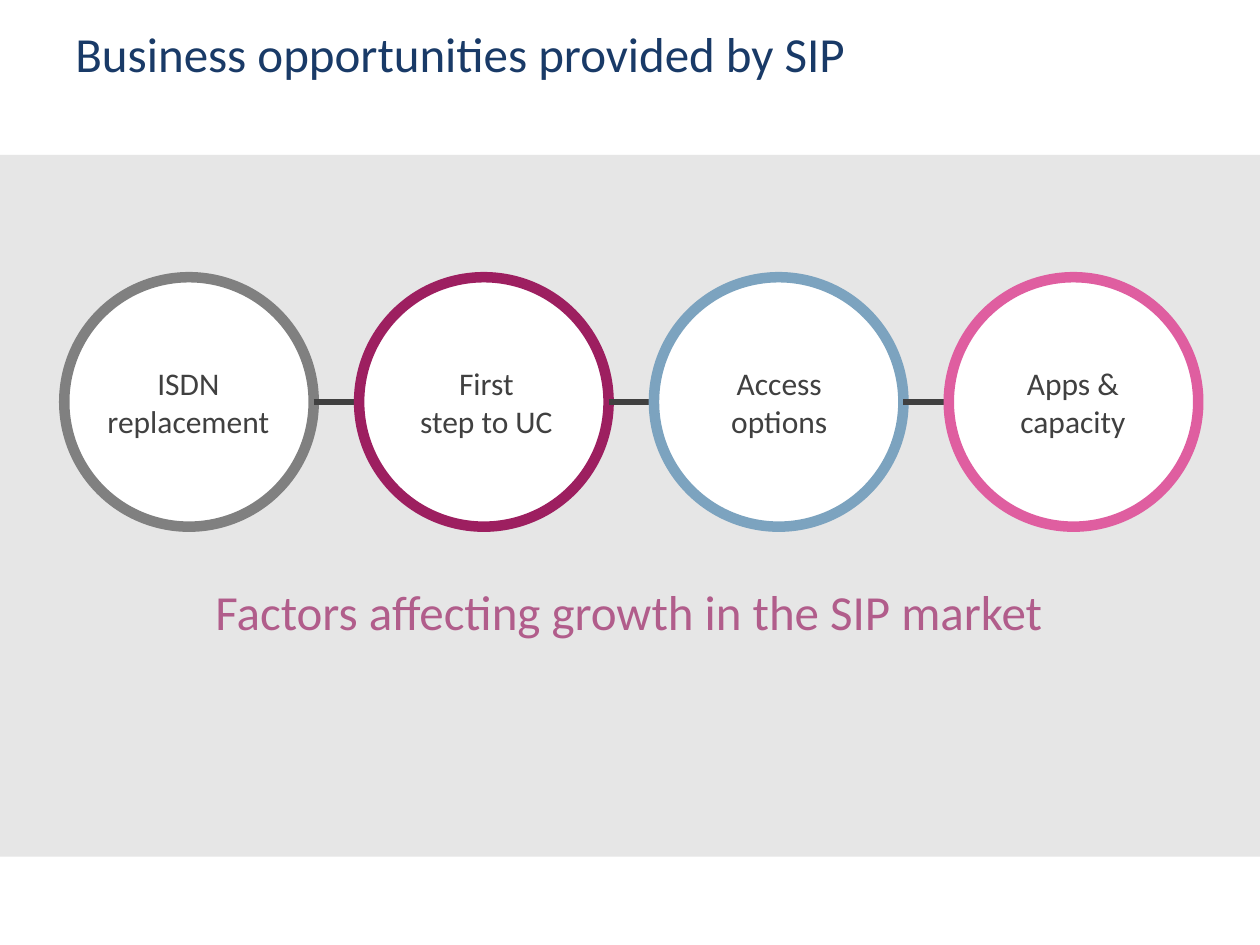
from dataclasses import dataclass

from lxml.etree import SubElement
from pptx import Presentation
from pptx.dml.color import RGBColor
from pptx.enum.shapes import MSO_CONNECTOR, MSO_SHAPE
from pptx.enum.text import MSO_ANCHOR, MSO_AUTO_SIZE, PP_ALIGN
from pptx.oxml.ns import qn
from pptx.shapes.autoshape import Shape
from pptx.slide import Slide
from pptx.util import Inches, Pt

FONT = "Calibri"
DARK = "404040"
DIAMETER = 1.98
GAP = 0.36
FIRST_LEFT = 0.51
CIRCLE_TOP = 2.2
MIDDLE = CIRCLE_TOP + DIAMETER / 2
LABEL_TOP = 2.84
LABEL_HEIGHT = 0.71


@dataclass
class Factor:
    text: str
    ring: str
    label_left: float
    label_width: float


FACTORS = [
    Factor("ISDN\nreplacement", "808080", 0.74, 1.51),
    Factor("First\nstep to UC", "9D1F60", 3.22, 1.28),
    Factor("Access\noptions", "7CA3BF", 5.7, 0.97),
    Factor("Apps &\ncapacity", "DF5EA0", 7.99, 1.05),
]


def colour(value: str) -> RGBColor:
    return RGBColor.from_string(value)


def add_filled_shape(page: Slide, kind: MSO_SHAPE, left: float, top: float,
                     width: float, height: float, fill: str) -> Shape:
    shape = page.shapes.add_shape(kind, Inches(left), Inches(top), Inches(width), Inches(height))
    shape.shadow.inherit = False
    shape.fill.solid()
    shape.fill.fore_color.rgb = colour(fill)
    shape.line.fill.background()
    return shape


def add_text(page: Slide, text: str, left: float, top: float, width: float, height: float,
             size: int, text_colour: str, align: PP_ALIGN = PP_ALIGN.LEFT) -> Shape:
    box = page.shapes.add_textbox(Inches(left), Inches(top), Inches(width), Inches(height))
    frame = box.text_frame
    frame.word_wrap = True
    frame.vertical_anchor = MSO_ANCHOR.TOP
    para = frame.paragraphs[0]
    para.text = text
    para.alignment = align
    for span in para.runs:
        span.font.name = FONT
        span.font.size = Pt(size)
        span.font.color.rgb = colour(text_colour)
    return box


def add_link(page: Slide, start: float, end: float) -> None:
    link = page.shapes.add_connector(
        MSO_CONNECTOR.STRAIGHT, Inches(start), Inches(MIDDLE), Inches(end), Inches(MIDDLE))
    link.line.color.rgb = colour(DARK)
    link.line.width = Pt(3)
    SubElement(link._element.spPr, qn("a:effectLst"))


def add_factor(page: Slide, factor: Factor, left: float) -> None:
    circle = add_filled_shape(page, MSO_SHAPE.OVAL, left, CIRCLE_TOP, DIAMETER, DIAMETER, "FFFFFF")
    circle.line.color.rgb = colour(factor.ring)
    circle.line.width = Pt(6)
    label = add_text(page, factor.text, factor.label_left, LABEL_TOP, factor.label_width,
                     LABEL_HEIGHT, 18, DARK, PP_ALIGN.CENTER)
    label.text_frame.word_wrap = False
    label.text_frame.auto_size = MSO_AUTO_SIZE.SHAPE_TO_FIT_TEXT


def main() -> None:
    deck = Presentation()
    deck.slide_width, deck.slide_height = Inches(10), Inches(7.5)
    page = deck.slides.add_slide(deck.slide_layouts[6])

    add_filled_shape(page, MSO_SHAPE.RECTANGLE, 0, 1.23, 10, 5.57, "E6E6E6")
    add_text(page, "Business opportunities provided by SIP", 0.5, 0.14, 9, 0.95, 28, "193A67")
    caption = add_text(page, "Factors affecting growth in the SIP market",
                       1.45, 4.48, 7.08, 0.75, 28, "B15D8B", PP_ALIGN.CENTER)
    caption.text_frame.paragraphs[0].line_spacing = Pt(40)

    for index, factor in enumerate(FACTORS):
        left = FIRST_LEFT + index * (DIAMETER + GAP)
        if index > 0:
            add_link(page, left - GAP, left)
        add_factor(page, factor, left)

    deck.save("out.pptx")


if __name__ == "__main__":
    main()
